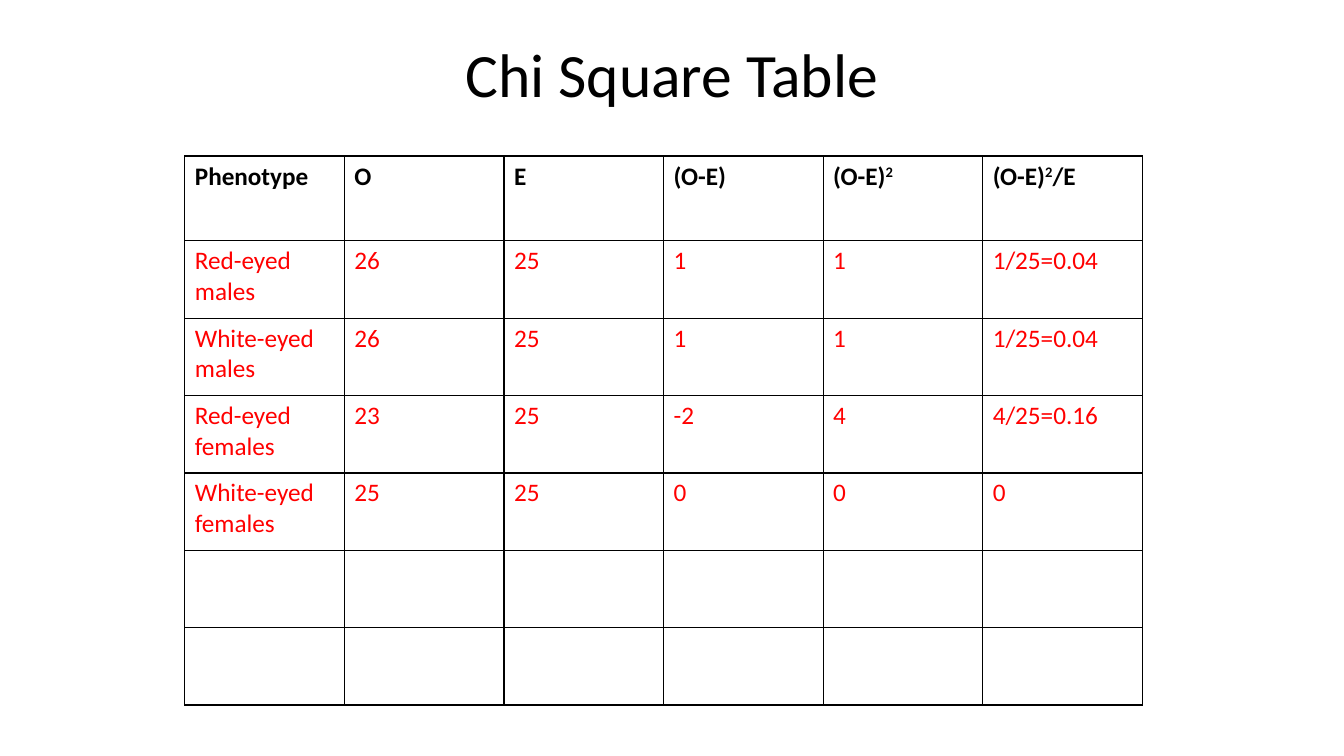
from dataclasses import dataclass

from lxml import etree
from pptx import Presentation
from pptx.dml.color import RGBColor
from pptx.enum.text import MSO_ANCHOR, PP_ALIGN
from pptx.oxml.ns import qn
from pptx.slide import Slide
from pptx.table import _Cell
from pptx.util import Pt

CENTER = PP_ALIGN.CENTER
TOP = MSO_ANCHOR.TOP
TITLE_ONLY = 5
FONT = "Calibri"
COLORS = {"ink": "000000", "result": "FF0000", "paper": "FFFFFF"}
BORDER = Pt(1)
COLUMN_WIDTH = Pt(114)
HEADER_HEIGHT = Pt(60.5)
ROW_HEIGHT = Pt(55.3)


@dataclass
class TableRow:
    texts: tuple[str, ...] = ("",) * 6
    color: str = "result"
    bold: bool = False


ROWS = [
    TableRow(("Phenotype", "O", "E", "(O-E)", "(O-E)^2", "(O-E)^2^/E"), "ink", True),
    TableRow(("Red-eyed males", "26", "25", "1", "1", "1/25=0.04")),
    TableRow(("White-eyed males", "26", "25", "1", "1", "1/25=0.04")),
    TableRow(("Red-eyed females", "23", "25", "-2", "4", "4/25=0.16")),
    TableRow(("White-eyed females", "25", "25", "0", "0", "0")),
    TableRow(),
    TableRow(),
]


def rgb(name: str) -> RGBColor:
    return RGBColor.from_string(COLORS[name])


def add_title(s: Slide, text: str) -> None:
    sp = s.shapes.title
    sp.left, sp.top, sp.width, sp.height = Pt(156), Pt(22), Pt(648), Pt(90)
    tf = sp.text_frame
    tf.text = text
    tf.vertical_anchor = TOP
    p = tf.paragraphs[0]
    p.alignment = CENTER
    font = p.runs[0].font
    font.name, font.size = FONT, Pt(44)
    font.color.rgb = rgb("ink")


def set_borders(cell: _Cell) -> None:
    tc_pr = cell._tc.get_or_add_tcPr()
    for side in ("lnL", "lnR", "lnT", "lnB"):
        ln = etree.SubElement(tc_pr, qn(f"a:{side}"), w=str(BORDER))
        fill = etree.SubElement(ln, qn("a:solidFill"))
        etree.SubElement(fill, qn("a:srgbClr"), val=COLORS["ink"])


def write_cell(cell: _Cell, text: str, row: TableRow) -> None:
    """Write text in which every second part between carets is superscript."""
    p = cell.text_frame.paragraphs[0]
    p.font.size = Pt(18)
    if not text:
        return
    for i, part in enumerate(text.split("^")):
        r = p.add_run()
        r.text = part
        r.font.name, r.font.size, r.font.bold = FONT, Pt(18), row.bold
        r.font.color.rgb = rgb(row.color)
        if i % 2:
            r._r.get_or_add_rPr().set("baseline", "30000")


def add_chi_square_table(s: Slide, rows: list[TableRow]) -> None:
    n_cols = len(rows[0].texts)
    height = HEADER_HEIGHT + ROW_HEIGHT * (len(rows) - 1)
    table = s.shapes.add_table(
        len(rows), n_cols, Pt(132), Pt(111.5), COLUMN_WIDTH * n_cols, height
    ).table
    table.first_row = table.horz_banding = False
    for column in table.columns:
        column.width = COLUMN_WIDTH
    for i, row in enumerate(rows):
        table.rows[i].height = ROW_HEIGHT if i else HEADER_HEIGHT
        for j, text in enumerate(row.texts):
            cell = table.cell(i, j)
            set_borders(cell)
            cell.fill.solid()
            cell.fill.fore_color.rgb = rgb("paper")
            write_cell(cell, text, row)


def main() -> None:
    prs = Presentation()
    prs.slide_width, prs.slide_height = Pt(960), Pt(540)
    s = prs.slides.add_slide(prs.slide_layouts[TITLE_ONLY])
    add_title(s, "Chi Square Table")
    add_chi_square_table(s, ROWS)
    prs.save("out.pptx")


if __name__ == "__main__":
    main()
